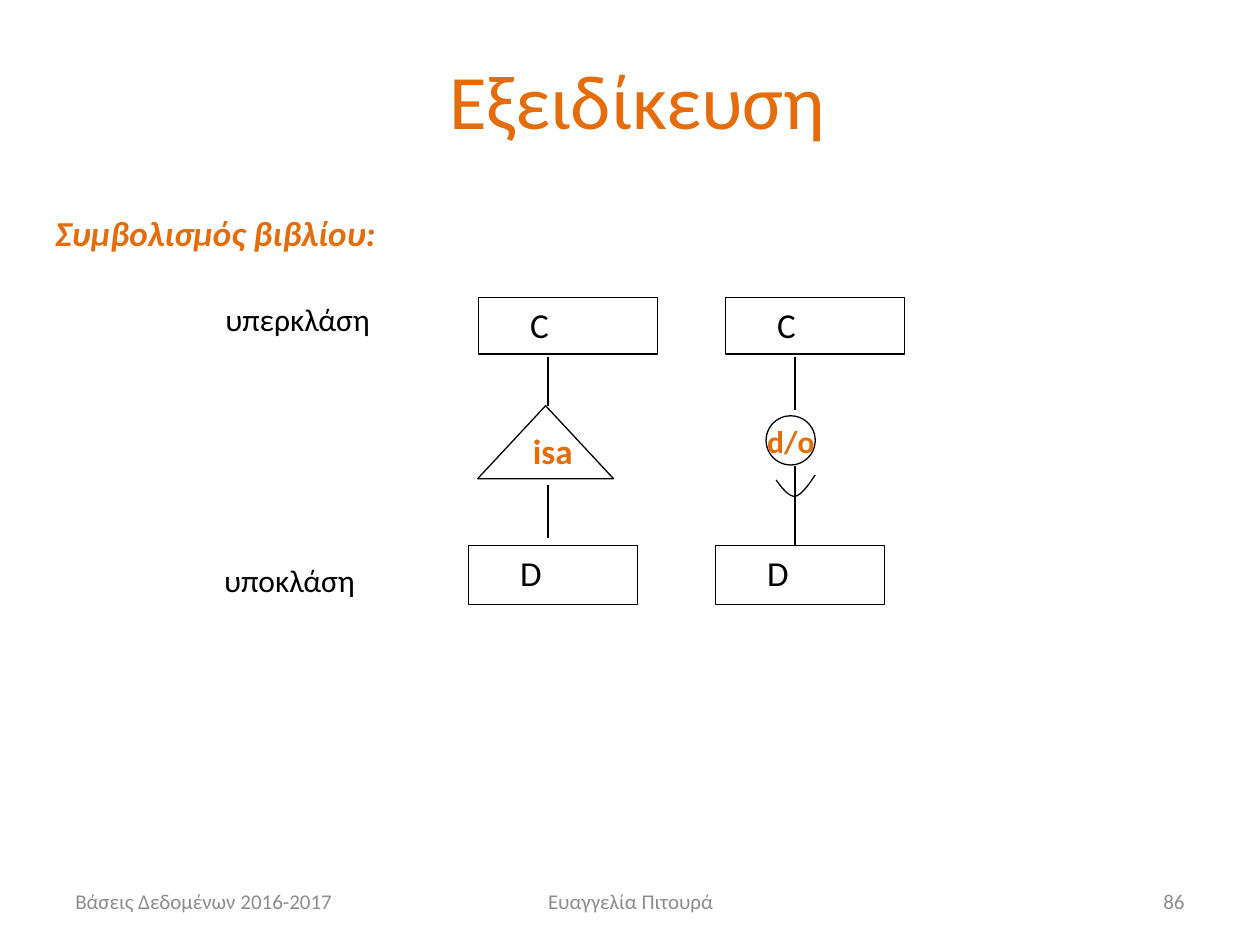
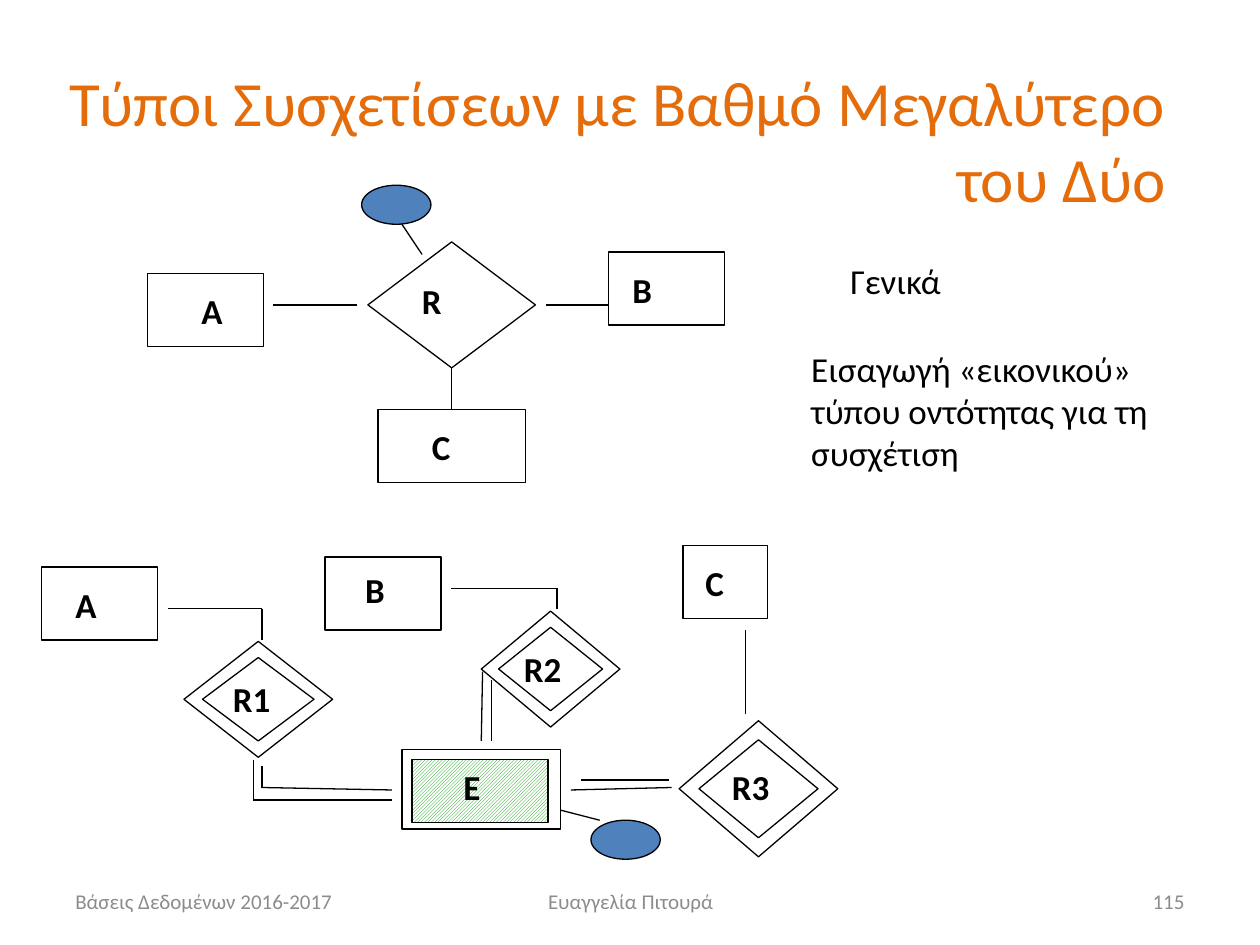
from dataclasses import dataclass
from itertools import pairwise

from lxml.etree import SubElement
from pptx import Presentation
from pptx.dml.color import RGBColor
from pptx.enum.dml import MSO_PATTERN
from pptx.enum.shapes import MSO_CONNECTOR, MSO_SHAPE
from pptx.enum.text import MSO_ANCHOR, MSO_AUTO_SIZE, PP_ALIGN
from pptx.oxml.ns import qn
from pptx.slide import Slide
from pptx.util import Inches, Pt

BLACK = RGBColor(0x00, 0x00, 0x00)
WHITE = RGBColor(0xFF, 0xFF, 0xFF)
ORANGE = RGBColor(0xE4, 0x6C, 0x0A)
GRAY = RGBColor(0x8C, 0x8C, 0x8C)
BLUE = RGBColor(0x4F, 0x81, 0xBD)
GREEN = RGBColor(0x00, 0x99, 0x00)

FONT = "Calibri"
TITLE_ONLY = 5
LABEL_WIDTH, LABEL_HEIGHT = 0.92, 0.43
ATTRIBUTE_SIZE = (0.55, 0.31)


def write(box, text, size, color=BLACK, align=PP_ALIGN.LEFT,
          anchor=MSO_ANCHOR.TOP, **styles):
    frame = box.text_frame
    frame.word_wrap = True
    frame.auto_size = MSO_AUTO_SIZE.NONE
    frame.vertical_anchor = anchor
    para = frame.paragraphs[0]
    para.alignment = align
    span = para.add_run()
    span.text = text
    formats = {"name": FONT, "size": Pt(size), **styles}
    for name, value in formats.items():
        setattr(span.font, name, value)
    span.font.color.rgb = color


@dataclass
class Region:
    """Part of a page; every position is measured in inches from its corner."""
    page: Slide
    left: float = 0
    top: float = 0

    def at(self, x, y):
        return Inches(self.left + x), Inches(self.top + y)

    def label(self, x, y, text, width=LABEL_WIDTH, height=LABEL_HEIGHT,
              size=20, **styles):
        box = self.page.shapes.add_textbox(
            *self.at(x, y), Inches(width), Inches(height))
        write(box, text, size, **styles)

    def outline(self, kind, x, y, width, height, fill=None):
        shape = self.page.shapes.add_shape(
            kind, *self.at(x, y), Inches(width), Inches(height))
        finish(shape)
        if fill is not None:
            shape.fill.solid()
            shape.fill.fore_color.rgb = fill
        return shape

    def entity(self, x, y, width, height, name, indent, drop=0.08, bold=True):
        """Rectangle whose name starts at the given indent and drop."""
        shape = self.outline(MSO_SHAPE.RECTANGLE, x, y, width, height)
        self.label(x + indent, y + drop, name, bold=bold)
        return shape

    def attribute(self, x, y):
        self.outline(MSO_SHAPE.OVAL, x, y, *ATTRIBUTE_SIZE, fill=BLUE)

    def weak_relation(self, x, y, width, height, name, indent, drop):
        """Double diamond with its name."""
        inset_x, inset_y = width * 0.125, height * 0.14
        self.outline(MSO_SHAPE.DIAMOND, x, y, width, height)
        self.outline(MSO_SHAPE.DIAMOND, x + inset_x, y + inset_y,
                     width - 2 * inset_x, height - 2 * inset_y)
        self.label(x + indent, y + drop, name, bold=True)

    def lines(self, *points, weight=0.75):
        """Straight lines through the points; gives back the last one."""
        for start, end in pairwise(points):
            line = self.page.shapes.add_connector(
                MSO_CONNECTOR.STRAIGHT, *self.at(*start), *self.at(*end))
            line.line.color.rgb = BLACK
            line.line.width = Pt(weight)
            SubElement(line._element.spPr, qn("a:effectLst"))
        return line

    def curve(self, *beziers, steps=10):
        """Open outline along joined cubic curves of four points each."""
        points = []
        for a, b, c, d in beziers:
            for step in range(steps + 1):
                t = step / steps
                u = 1 - t
                points.append(self.at(*(
                    u**3 * p + 3 * u * u * t * q + 3 * u * t * t * r + t**3 * s
                    for p, q, r, s in zip(a, b, c, d))))
        builder = self.page.shapes.build_freeform(*points[0])
        builder.add_line_segments(points[1:], close=False)
        finish(builder.convert_to_shape())


def finish(shape):
    shape.shadow.inherit = False
    shape.fill.background()
    shape.line.color.rgb = BLACK
    shape.line.width = Pt(0.75)


def add_page(deck, title, title_box, title_size, align, number):
    page = deck.slides.add_slide(deck.slide_layouts[TITLE_ONLY])
    heading = page.shapes.title
    for name, value in zip(("left", "top", "width", "height"), title_box):
        setattr(heading, name, Inches(value))
    write(heading, title, title_size, ORANGE, align, MSO_ANCHOR.MIDDLE)
    footer = Region(page, 0.5, 6.95)
    for x, width, text, side in (
            (0, 2.33, "Βάσεις Δεδομένων 2016-2017", PP_ALIGN.LEFT),
            (2.92, 3.17, "Ευαγγελία Πιτουρά", PP_ALIGN.CENTER),
            (6.67, 2.33, number, PP_ALIGN.RIGHT)):
        footer.label(x, 0, text, width, 0.4, 12, color=GRAY, align=side,
                     anchor=MSO_ANCHOR.MIDDLE)
    return page


def add_class_pair(region):
    region.entity(0.08, 0, 1.42, 0.45, "C", 0.31, 0, bold=False)
    region.entity(0, 1.97, 1.34, 0.47, "D", 0.31, 0, bold=False)


def add_isa_notation(region):
    add_class_pair(region)
    triangle = region.outline(MSO_SHAPE.FLOWCHART_MERGE, 0.07, 0.86, 1.08, 0.58)
    triangle.rotation = 180
    region.label(0.41, 1, "isa", color=ORANGE, bold=True)
    region.lines((0.63, 0.47), (0.63, 0.86))
    region.lines((0.63, 1.49), (0.63, 1.91))


def add_circle_notation(region):
    add_class_pair(region)
    region.outline(MSO_SHAPE.OVAL, 0.4, 0.94, 0.39, 0.39)
    region.label(0.31, 0.94, "d/ο", 0.69, 0.4, 18, color=ORANGE, bold=True)
    region.lines((0.63, 0.47), (0.63, 0.89))
    region.lines((0.63, 1.34), (0.63, 1.97))
    region.curve(((0.48, 1.45), (0.53, 1.52), (0.58, 1.58), (0.63, 1.58)),
                 ((0.63, 1.58), (0.69, 1.57), (0.77, 1.44), (0.79, 1.41)))


def add_ternary_relation(region):
    relation = region.outline(MSO_SHAPE.DIAMOND, 1.75, 0.45, 1.33, 1)
    region.label(2.08, 0.7, "R", bold=True)
    region.entity(0, 0.7, 0.92, 0.58, "A", 0.33)
    region.entity(3.66, 0.53, 0.92, 0.58, "B", 0.09)
    entity_c = region.entity(1.83, 1.78, 1.17, 0.58, "C", 0.33)
    region.lines((1, 0.95), (1.66, 0.95))
    region.lines((3.16, 0.95), (3.66, 0.95))
    link = region.lines((2.41, 1.45), (2.41, 1.78))
    link.begin_connect(relation, 2)
    link.end_connect(entity_c, 0)
    region.attribute(1.7, 0)
    region.lines((2.02, 0.31), (2.18, 0.55))


def add_virtual_entity(region):
    region.entity(0, 0.17, 0.92, 0.58, "A", 0.17)
    region.entity(2.25, 0.09, 0.92, 0.58, "B", 0.22, 0.04)
    region.entity(5.09, 0, 0.67, 0.58, "C", 0.08)
    region.outline(MSO_SHAPE.RECTANGLE, 2.86, 1.62, 1.26, 0.63)
    hatch = region.outline(MSO_SHAPE.RECTANGLE, 2.94, 1.7, 1.08, 0.5).fill
    hatch.patterned()
    hatch.pattern = MSO_PATTERN.DARK_UPWARD_DIAGONAL
    hatch.fore_color.rgb = GREEN
    hatch.back_color.rgb = WHITE
    region.label(3.25, 1.7, "E", bold=True)
    region.attribute(4.36, 2.18)
    region.weak_relation(1.13, 0.76, 1.18, 0.92, "R1", 0.29, 0.24)
    region.weak_relation(3.49, 0.52, 1.1, 0.92, "R2", 0.24, 0.24)
    region.weak_relation(5.06, 1.39, 1.26, 1.08, "R3", 0.32, 0.31)
    for route in (
            ((1, 0.5), (1.75, 0.5), (1.75, 0.75)),
            ((3.25, 0.34), (4.09, 0.34), (4.09, 0.5)),
            ((1.75, 1.75), (1.75, 1.92), (2.78, 1.94)),
            ((1.68, 1.7), (1.68, 2.02), (2.78, 2.02)),
            ((3.5, 1), (3.49, 1.55)),
            ((3.57, 1.07), (3.57, 1.55)),
            ((4.2, 1.94), (5, 1.92)),
            ((4.28, 1.86), (4.98, 1.86)),
            ((4.12, 2.1), (4.43, 2.18))):
        region.lines(*route)
    region.lines((5.59, 1.34), (5.59, 0.67), weight=0.5)


def add_specialization_page(deck):
    page = add_page(deck, "Εξειδίκευση", (0.56, 0.16, 9, 1.25), 44,
                    PP_ALIGN.CENTER, "86")
    captions = Region(page)
    captions.label(0.34, 1.63, "Συμβολισμός βιβλίου:", 4.26, 0.44,
                   color=ORANGE, bold=True, italic=True)
    captions.label(1.69, 2.33, "υπερκλάση", 1.57, 0.4, 18)
    captions.label(1.68, 4.4, "υποκλάση", 1.57, 0.4, 18)
    add_isa_notation(Region(page, 3.72, 2.36))
    add_circle_notation(Region(page, 5.68, 2.36))


def add_degree_page(deck):
    page = add_page(deck, "Τύποι Συσχετίσεων με Βαθμό Μεγαλύτερο του Δύο",
                    (0.35, 0.13, 9, 1.95), 36, PP_ALIGN.RIGHT, "115")
    add_ternary_relation(Region(page, 1.17, 1.47))
    add_virtual_entity(Region(page, 0.33, 4.33))
    captions = Region(page)
    captions.label(6.65, 2.01, "Γενικά", 2.36, 0.44)
    captions.label(6.34, 2.71,
                   "Εισαγωγή «εικονικού» τύπου οντότητας για τη συσχέτιση",
                   3.44, 1.11)


def main():
    deck = Presentation()
    deck.slide_width, deck.slide_height = Inches(10), Inches(7.5)
    add_specialization_page(deck)
    add_degree_page(deck)
    deck.save("out.pptx")


if __name__ == "__main__":
    main()
